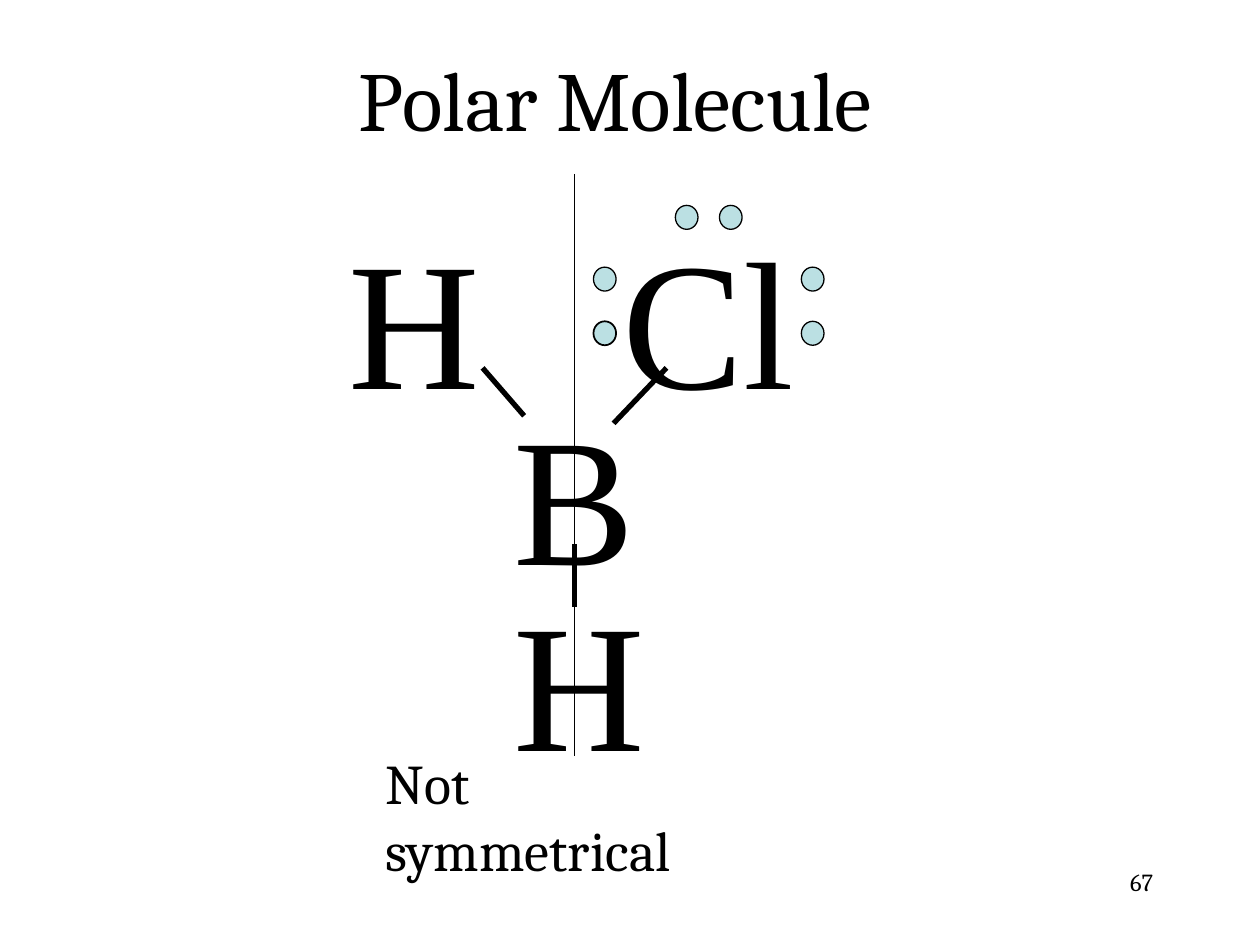
from lxml.etree import SubElement
from pptx import Presentation
from pptx.dml.color import RGBColor
from pptx.enum.shapes import MSO_CONNECTOR, MSO_SHAPE
from pptx.enum.text import PP_ALIGN
from pptx.oxml.ns import qn
from pptx.util import Inches, Pt

COLORS = {"ink": "000000", "electron": "BBE0E3"}


class MoleculeSlide:
    """Draws the parts of a molecule diagram on one slide."""

    def __init__(self, page):
        self.page = page
        self.ink = RGBColor.from_string(COLORS["ink"])
        self.electron_fill = RGBColor.from_string(COLORS["electron"])

    def text(self, words, left, top, width, height, size,
             font="Cambria", align=PP_ALIGN.LEFT, inset=0.05):
        box = self.page.shapes.add_textbox(
            Inches(left), Inches(top), Inches(width), Inches(height))
        frame = box.text_frame
        frame.word_wrap = True
        frame.margin_top = Inches(inset)
        para = frame.paragraphs[0]
        para.text = words
        para.alignment = align
        para.font.name = font
        para.font.size = Pt(size)
        para.font.color.rgb = self.ink

    def atom(self, symbol, left, top, width=0.5):
        self.text(symbol, left, top, width, 1.85, 104, "Times New Roman", inset=0.2)

    def electron(self, left, top, outline=0.75):
        dot = self.page.shapes.add_shape(
            MSO_SHAPE.OVAL, Inches(left), Inches(top), Inches(0.18), Inches(0.19))
        dot.shadow.inherit = False
        dot.fill.solid()
        dot.fill.fore_color.rgb = self.electron_fill
        dot.line.color.rgb = self.ink
        dot.line.width = Pt(outline)

    def line(self, start, end, weight=3):
        stroke = self.page.shapes.add_connector(
            MSO_CONNECTOR.STRAIGHT, *(Inches(value) for value in start + end))
        stroke.line.color.rgb = self.ink
        stroke.line.width = Pt(weight)
        SubElement(stroke._element.spPr, qn("a:effectLst"))


def main():
    deck = Presentation()
    deck.slide_width, deck.slide_height = Inches(10), Inches(7.5)
    slide = MoleculeSlide(deck.slides.add_slide(deck.slide_layouts[6]))

    slide.atom("H", 2.67, 1.45)
    slide.atom("Cl", 4.84, 1.45, 2.75)
    for left in (5.36, 5.71):
        slide.electron(left, 1.63)
    for left, lower_outline in ((6.36, 0.75), (4.71, 1)):
        slide.electron(left, 2.12)
        slide.electron(left, 2.55, lower_outline)

    axis = 4.56
    slide.line((axis, 1.38), (axis, 6), 0.75)
    slide.text("Polar Molecule", 2.75, 0.33, 5.25, 0.91, 48)
    slide.text("Not symmetrical", 2.96, 5.89, 3.21, 0.64, 32)

    slide.atom("H", 3.98, 4.32)
    slide.atom("B", 3.98, 2.84)
    slide.line((3.83, 2.92), (4.16, 3.3))
    slide.line((5.29, 2.92), (4.87, 3.36))
    slide.line((axis, 4.32), (axis, 4.82))
    slide.text("67", 7.17, 6.83, 2.08, 0.5, 14, align=PP_ALIGN.RIGHT)

    deck.save("out.pptx")


if __name__ == "__main__":
    main()
